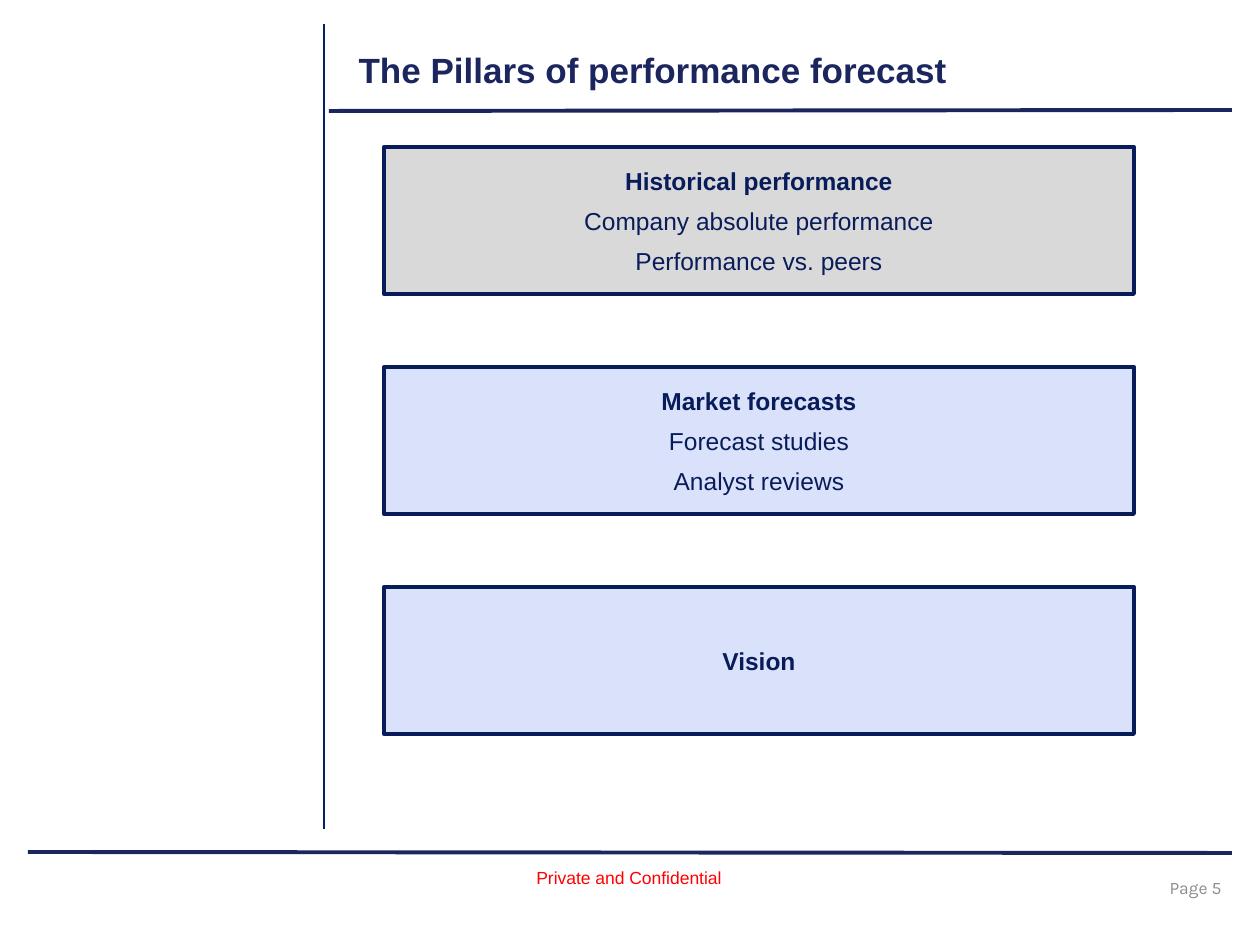
import pptx
import pptx.dml.color
import pptx.enum.shapes
import pptx.enum.text
import pptx.oxml
import pptx.oxml.ns
import pptx.util
from dataclasses import dataclass

PX_PER_INCH = 126
ALIGN = pptx.enum.text.PP_ALIGN
ANCHOR = pptx.enum.text.MSO_ANCHOR


@dataclass(frozen=True)
class Theme:
    navy: str = "091C5A"
    rule: str = "1B265F"
    divider: str = "002368"
    grey: str = "D9D9D9"
    pale_blue: str = "DAE2FB"
    red: str = "FF0000"
    page_grey: str = "8C8C8C"
    background: str = "FFFFFF"
    font: str = "Arial"
    page_font: str = "Karla"
    title_size: int = 20
    body_size: int = 14
    small_size: int = 10
    heavy: float = 2.25
    thin: float = 0.75


THEME = Theme()


def px(length):
    return pptx.util.Emu(round(length * 914400 / PX_PER_INCH))


def rgb(value):
    return pptx.dml.color.RGBColor.from_string(value)


def set_attributes(target, values):
    for name, value in values.items():
        setattr(target, name, value)


def write_line(paragraph, text, size, color, align, bold=False, font=THEME.font):
    paragraph.text = text
    paragraph.alignment = align
    set_attributes(paragraph.runs[0].font, {
        "name": font, "size": pptx.util.Pt(size), "bold": bold})
    paragraph.runs[0].font.color.rgb = rgb(color)


def add_rule(slide, start, end, color, width):
    rule = slide.shapes.add_connector(
        pptx.enum.shapes.MSO_CONNECTOR.STRAIGHT, *map(px, start + end))
    rule.line.color.rgb = rgb(color)
    rule.line.width = pptx.util.Pt(width)
    properties = rule._element.spPr
    properties.append(properties.makeelement(pptx.oxml.ns.qn("a:effectLst"), {}))


def add_label(slide, box, text, color, align, font=THEME.font, **frame_format):
    label = slide.shapes.add_textbox(*map(px, box))
    set_attributes(label.text_frame, frame_format)
    write_line(label.text_frame.paragraphs[0], text, THEME.small_size, color,
               align, font=font)


def add_title(slide, box, text):
    title = slide.shapes.title
    set_attributes(title, dict(zip(("left", "top", "width", "height"), map(px, box))))
    set_attributes(title.text_frame, {
        "vertical_anchor": ANCHOR.MIDDLE, "word_wrap": True,
        "margin_bottom": px(10)})
    write_line(title.text_frame.paragraphs[0], text, THEME.title_size,
               THEME.rule, ALIGN.LEFT, bold=True)


def add_pillar(slide, box, fill, lines):
    pillar = slide.shapes.add_shape(
        pptx.enum.shapes.MSO_SHAPE.RECTANGLE, *map(px, box))
    pillar.shadow.inherit = False
    pillar.fill.solid()
    pillar.fill.fore_color.rgb = rgb(fill)
    pillar.line.color.rgb = rgb(THEME.navy)
    pillar.line.width = pptx.util.Pt(THEME.heavy)
    frame = pillar.text_frame
    set_attributes(frame, {"vertical_anchor": ANCHOR.MIDDLE, "word_wrap": True})
    for index, text in enumerate(lines):
        paragraph = frame.add_paragraph() if index else frame.paragraphs[0]
        write_line(paragraph, text, THEME.body_size, THEME.navy, ALIGN.CENTER,
                   bold=index == 0)
        paragraph.space_after = pptx.util.Pt(6)


def main():
    deck = pptx.Presentation()
    set_attributes(deck, {"slide_width": px(1260), "slide_height": px(945)})
    slide = deck.slides.add_slide(deck.slide_layouts[5])
    slide.background.fill.solid()
    slide.background.fill.fore_color.rgb = rgb(THEME.background)

    # Frame rules: footer, heading and the two parts of the side divider
    add_rule(slide, (28, 852), (1232, 853), THEME.rule, THEME.heavy)
    add_rule(slide, (329, 111), (1232, 110), THEME.rule, THEME.heavy)
    for top, bottom in ((24, 108), (32, 829)):
        add_rule(slide, (324, top), (324, bottom), THEME.divider, THEME.thin)

    # Footer
    add_label(slide, (944, 863, 294, 50), "Page 5 ", THEME.page_grey, ALIGN.RIGHT,
              font=THEME.page_font, vertical_anchor=ANCHOR.MIDDLE, word_wrap=True)
    add_label(slide, (524, 861, 212, 34), "Private and Confidential", THEME.red,
              ALIGN.LEFT, word_wrap=False,
              auto_size=pptx.enum.text.MSO_AUTO_SIZE.SHAPE_TO_FIT_TEXT)

    # Title
    add_title(slide, (346, 38, 851, 67), "The Pillars of performance forecast")

    # Pillars, evenly stacked
    pillars = (
        (THEME.grey, ("Historical performance", "Company absolute performance",
                      "Performance vs. peers")),
        (THEME.pale_blue, ("Market forecasts", "Forecast studies",
                           "Analyst reviews")),
        (THEME.pale_blue, ("Vision",)),
    )
    first_top, pitch = 147, 220
    for row, (fill, lines) in enumerate(pillars):
        add_pillar(slide, (384, first_top + row * pitch, 750, 147), fill, lines)

    deck.save("out.pptx")


if __name__ == "__main__":
    main()
